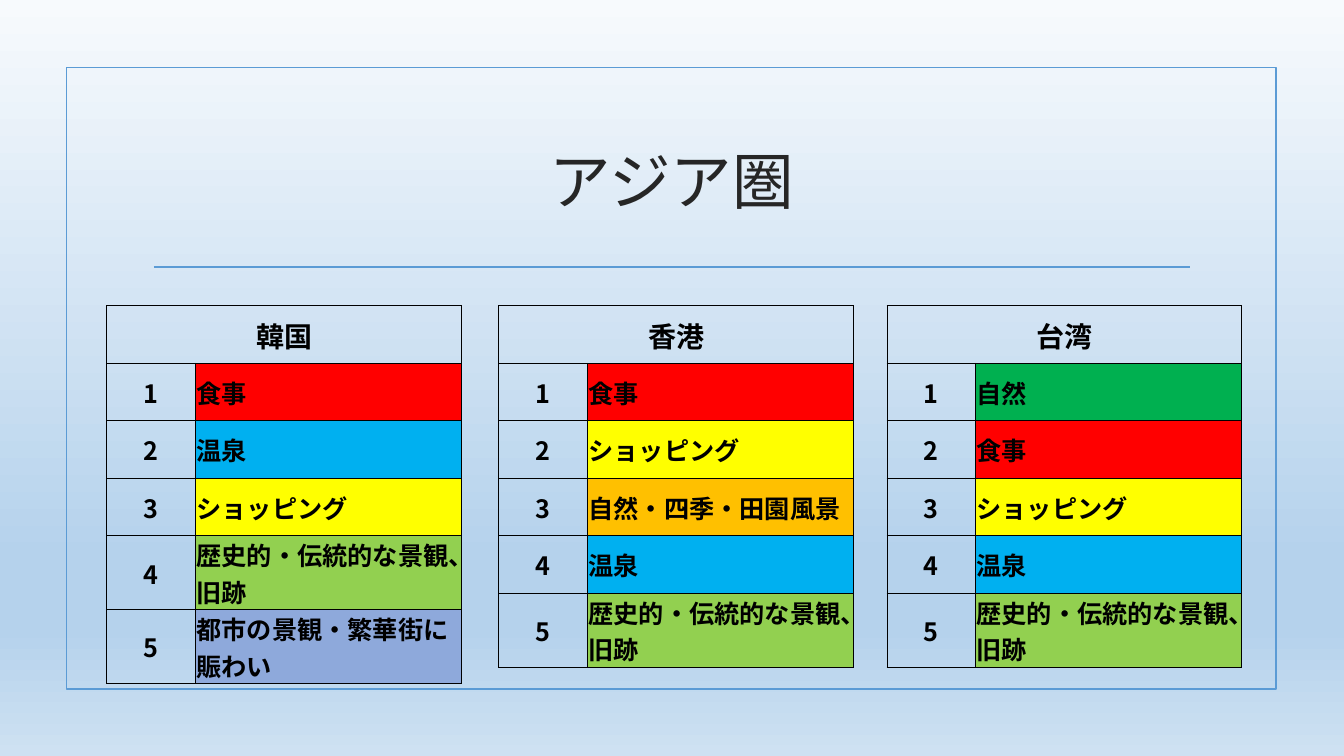
from dataclasses import dataclass
from lxml.etree import SubElement
from pptx import Presentation
from pptx.dml.color import RGBColor
from pptx.enum.lang import MSO_LANGUAGE_ID
from pptx.enum.shapes import MSO_CONNECTOR, MSO_SHAPE
from pptx.enum.text import MSO_ANCHOR, MSO_AUTO_SIZE, PP_ALIGN
from pptx.oxml import parse_xml
from pptx.oxml.ns import nsdecls, qn
from pptx.util import Cm, Pt


@dataclass(frozen=True)
class Theme:
    accent: str = "5B9BD5"
    title: str = "262626"
    ink: str = "000000"
    title_font: str = "Times New Roman"
    body_font: str = "Noto Sans CJK JP"
    title_size: int = 44
    head_size: int = 20
    body_size: int = 18
    rule: float = 1.25
    border: float = 0.5
    sky: tuple = ((0, "F7FAFD"), (74, "B5D2EC"), (83, "B5D2EC"), (100, "CEE1F2"))


theme = Theme()
fills = {
    "食事": "FF0000",
    "温泉": "00B0F0",
    "ショッピング": "FFFF00",
    "自然": "00B050",
    "自然・四季・田園風景": "FFC000",
    "歴史的・伝統的な景観、旧跡": "92D050",
    "都市の景観・繁華街に賑わい": "8EA9DB",
}
rankings = [
    ("韓国", 2.69, ["食事", "温泉", "ショッピング", "歴史的・伝統的な景観、旧跡", "都市の景観・繁華街に賑わい"]),
    ("香港", 12.57, ["食事", "ショッピング", "自然・四季・田園風景", "温泉", "歴史的・伝統的な景観、旧跡"]),
    ("台湾", 22.35, ["自然", "食事", "ショッピング", "温泉", "歴史的・伝統的な景観、旧跡"]),
]
table_top, row_height = 7.7, 1.45
col_widths = [2.24, 6.7]


def write(tf, text, align, size, color, name, bold):
    p = tf.paragraphs[0]
    p.alignment = align
    r = p.add_run()
    r.text = text
    r.font.color.rgb = RGBColor.from_string(color)
    values = {"size": Pt(size), "name": name, "bold": bold, "language_id": MSO_LANGUAGE_ID.JAPANESE}
    for key, value in values.items():
        setattr(r.font, key, value)
    SubElement(r.font._element, qn("a:ea"), typeface=theme.body_font)


def add_border(cell):
    tcPr = cell._tc.get_or_add_tcPr()
    for side in "LRTB":
        tcPr.append(parse_xml(
            f'<a:ln{side} {nsdecls("a")} w="{Pt(theme.border)}"><a:solidFill>'
            f'<a:srgbClr val="{theme.ink}"/></a:solidFill></a:ln{side}>'))


prs = Presentation()
prs.slide_width, prs.slide_height = Cm(33.87), Cm(19.05)
s = prs.slides.add_slide(prs.slide_layouts[5])

bg = s.background.fill
bg.gradient()
bg.gradient_angle = 270
stops = s.background._cSld.find(".//" + qn("a:gsLst"))
stops.clear()
for position, color in theme.sky:
    gs = SubElement(stops, qn("a:gs"), pos=str(position * 1000))
    SubElement(gs, qn("a:srgbClr"), val=color)

frame = s.shapes.add_shape(MSO_SHAPE.RECTANGLE, Cm(1.68), Cm(1.7), Cm(30.48), Cm(15.67))
frame.shadow.inherit = False
frame.fill.background()
rule = s.shapes.add_connector(MSO_CONNECTOR.STRAIGHT, Cm(3.88), Cm(6.73), Cm(30), Cm(6.73))
SubElement(rule._element.spPr, qn("a:effectLst"))
for sp in (frame, rule):
    sp.line.color.rgb = RGBColor.from_string(theme.accent)
    sp.line.width = Pt(theme.rule)
rule_effects = rule._element.spPr.find(qn("a:effectLst"))
rule._element.spPr.append(rule_effects)

title = s.shapes.title
title.element.getparent().append(title.element)
for key, value in {"left": 3.6, "top": 2.72, "width": 26.67, "height": 3.63}.items():
    setattr(title, key, Cm(value))
tf = title.text_frame
for key, value in {"vertical_anchor": MSO_ANCHOR.MIDDLE, "auto_size": MSO_AUTO_SIZE.NONE, "word_wrap": True}.items():
    setattr(tf, key, value)
write(tf, "アジア圏", PP_ALIGN.CENTER, theme.title_size, theme.title, theme.title_font, False)

cell_format = {
    "vertical_anchor": MSO_ANCHOR.MIDDLE,
    "margin_left": Cm(0.02),
    "margin_right": Cm(0.02),
    "margin_top": Cm(0.02),
    "margin_bottom": Cm(0),
}
for region, left, items in rankings:
    rows = len(items) + 1
    table = s.shapes.add_table(
        rows, 2, Cm(left), Cm(table_top), Cm(sum(col_widths)), Cm(rows * row_height)).table
    table.first_row = table.horz_banding = False
    for col, width in zip(table.columns, col_widths):
        col.width = Cm(width)
    for row in table.rows:
        row.height = Cm(row_height)
    for cell in table.iter_cells():
        for key, value in cell_format.items():
            setattr(cell, key, value)
        add_border(cell)
        cell.fill.background()
    head = table.cell(0, 0)
    head.merge(table.cell(0, 1))
    write(head.text_frame, region, PP_ALIGN.CENTER, theme.head_size, theme.ink, theme.body_font, True)
    for rank, item in enumerate(items, 1):
        number, label = table.cell(rank, 0), table.cell(rank, 1)
        label.fill.solid()
        label.fill.fore_color.rgb = RGBColor.from_string(fills[item])
        for cell, text, align in ((number, str(rank), PP_ALIGN.CENTER), (label, item, PP_ALIGN.LEFT)):
            write(cell.text_frame, text, align, theme.body_size, theme.ink, theme.body_font, True)

prs.save("out.pptx")
